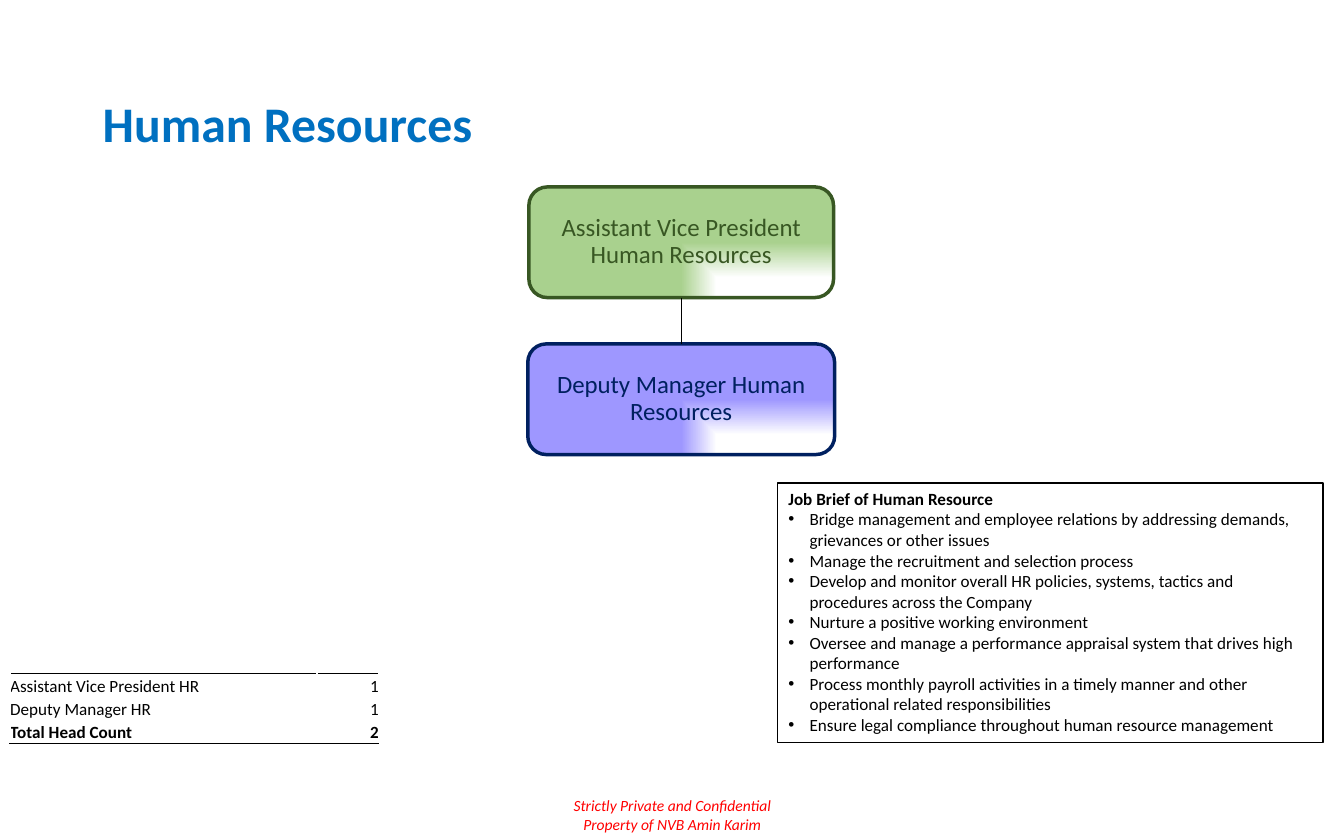
from lxml.etree import SubElement
from pptx import Presentation
from pptx.dml.color import RGBColor
from pptx.enum.shapes import MSO_CONNECTOR as Connector, MSO_SHAPE as Shape
from pptx.enum.text import MSO_ANCHOR as Anchor, PP_ALIGN as Align
from pptx.oxml import parse_xml
from pptx.oxml.ns import nsdecls, qn
from pptx.util import Cm, Pt

COLORS = {
    "title": "0070C0", "footer": "FF0000", "black": "000000", "white": "FFFFFF",
    "green": "A9D18E", "dark green": "385723", "violet": "9E97FF", "navy": "002060",
}
TITLE = "Human Resources"
FOOTER = ["Strictly Private and Confidential", "Property of NVB Amin Karim"]
POSITIONS = [  # text, width, fill, outline and text
    ("Assistant Vice President Human Resources", 6.91, "green", "dark green"),
    ("Deputy Manager Human Resources", 6.96, "violet", "navy"),
]
HEAD_COUNT = [
    ("Assistant Vice President HR", "1"),
    ("Deputy Manager HR", "1"),
    ("Total Head Count", "2"),
]
BRIEF_TITLE = "Job Brief of Human Resource"
BRIEF = [
    "Bridge management and employee relations by addressing demands, grievances or other issues",
    "Manage the recruitment and selection process",
    "Develop and monitor overall HR policies, systems, tactics and procedures across the Company",
    "Nurture a positive working environment",
    "Oversee and manage a performance appraisal system that drives high performance",
    "Process monthly payroll activities in a timely manner and other operational related responsibilities",
    "Ensure legal compliance throughout human resource management",
]
CHART_CENTER, CHART_TOP, CARD_HEIGHT, CARD_PITCH = 15.45, 4.24, 2.51, 3.56
COLUMN_WIDTHS, ROW_HEIGHT = (6.96, 1.4), 0.53


def rgb(name):
    return RGBColor.from_string(COLORS[name])


def write(frame, lines, size=11, color="black", bold=False, italic=False,
          align=Align.LEFT, anchor=Anchor.TOP, spacing=1.0, margin=None):
    frame.word_wrap = True
    frame.vertical_anchor = anchor
    if margin is not None:
        frame.margin_left = frame.margin_right = Cm(margin)
        frame.margin_top = frame.margin_bottom = Cm(margin)
    for index, line in enumerate(lines):
        paragraph = frame.paragraphs[0] if index == 0 else frame.add_paragraph()
        paragraph.alignment, paragraph.line_spacing = align, spacing
        run = paragraph.add_run()
        run.text = line
        font = run.font
        font.name, font.size, font.bold, font.italic = "Calibri", Pt(size), bold, italic
        font.color.rgb = rgb(color)


def add_box(slide, kind, left, top, width, height, line, line_width):
    shape = slide.shapes.add_shape(kind, Cm(left), Cm(top), Cm(width), Cm(height))
    shape.shadow.inherit = False
    shape.fill.solid()
    shape.fill.fore_color.rgb = rgb("white")
    shape.line.color.rgb = rgb(line)
    shape.line.width = Pt(line_width)
    return shape


def fade_to_corner(shape, color):
    """Fill with a colour that turns white towards the bottom right corner."""
    stops = "".join(
        f'<a:gs pos="{position}000"><a:srgbClr val="{COLORS[name]}"/></a:gs>'
        for position, name in ((0, "white"), (36, "white"), (100, color)))
    gradient = parse_xml(
        f'<a:gradFill {nsdecls("a")} rotWithShape="1"><a:gsLst>{stops}</a:gsLst>'
        '<a:path path="rect"><a:fillToRect l="100000" t="100000"/></a:path></a:gradFill>')
    solid = shape.element.spPr.find(qn("a:solidFill"))
    solid.getparent().replace(solid, gradient)


def add_bullet(paragraph):
    properties = paragraph._p.get_or_add_pPr()
    properties.set("marL", str(Cm(0.48)))
    properties.set("indent", str(-Cm(0.48)))
    SubElement(properties, qn("a:buFont"), typeface="Arial")
    SubElement(properties, qn("a:buChar"), char="•")


def add_border(cell, side):
    cell._tc.get_or_add_tcPr().insert(0, parse_xml(
        f'<a:{side} {nsdecls("a")} w="{Pt(1)}"><a:solidFill>'
        f'<a:srgbClr val="{COLORS["black"]}"/></a:solidFill></a:{side}>'))


def add_org_chart(slide):
    cards = []
    for index, (text, width, fill, accent) in enumerate(POSITIONS):
        card = add_box(slide, Shape.ROUNDED_RECTANGLE, CHART_CENTER - width / 2,
                       CHART_TOP + index * CARD_PITCH, width, CARD_HEIGHT, accent, 2.25)
        fade_to_corner(card, fill)
        write(card.text_frame, [text], size=16, color=accent, align=Align.CENTER,
              anchor=Anchor.MIDDLE, spacing=0.9, margin=0.03)
        cards.append(card)
    for upper, lower in zip(cards, cards[1:]):
        link = slide.shapes.add_connector(Connector.STRAIGHT, 0, 0, 0, 0)
        link.begin_connect(upper, 2)
        link.end_connect(lower, 0)
        link.line.color.rgb = rgb("black")
        link.line.width = Pt(0.75)
        SubElement(link.element.spPr, qn("a:effectLst"))


def add_head_count(slide):
    last = len(HEAD_COUNT) - 1
    table = slide.shapes.add_table(
        len(HEAD_COUNT), len(COLUMN_WIDTHS), Cm(0.23), Cm(15.27),
        Cm(sum(COLUMN_WIDTHS)), Cm(ROW_HEIGHT * len(HEAD_COUNT))).table
    table.first_row = table.horz_banding = False
    for column, width in zip(table.columns, COLUMN_WIDTHS):
        column.width = Cm(width)
    for row, values in enumerate(HEAD_COUNT):
        table.rows[row].height = Cm(ROW_HEIGHT)
        for column, value in enumerate(values):
            cell = table.cell(row, column)
            cell.fill.background()
            cell.margin_left = cell.margin_right = cell.margin_top = cell.margin_bottom = 0
            cell.vertical_anchor = Anchor.BOTTOM
            write(cell.text_frame, [value], bold=row == last,
                  align=Align.RIGHT if column else Align.LEFT)
            cell.vertical_anchor = Anchor.BOTTOM
            if row == 0:
                add_border(cell, "lnT")
            if row == last:
                add_border(cell, "lnB")


def add_job_brief(slide):
    box = add_box(slide, Shape.RECTANGLE, 17.63, 10.95, 12.37, 5.89, "black", 1)
    write(box.text_frame, [BRIEF_TITLE, *BRIEF])
    heading, *duties = box.text_frame.paragraphs
    heading.runs[0].font.bold = True
    for paragraph in duties:
        add_bullet(paragraph)


def add_text(slide, lines, left, top, width, height, **style):
    box = slide.shapes.add_textbox(Cm(left), Cm(top), Cm(width), Cm(height))
    write(box.text_frame, lines, **style)


def main():
    presentation = Presentation()
    presentation.slide_width, presentation.slide_height = Cm(30.48), Cm(19.05)
    slide = presentation.slides.add_slide(presentation.slide_layouts[6])
    add_text(slide, FOOTER, 12.73, 17.93, 5.03, 1.12, size=10, color="footer",
             italic=True, align=Align.CENTER)
    add_text(slide, [TITLE], 2.08, 1.02, 26.29, 3.68, size=32, color="title",
             bold=True, anchor=Anchor.MIDDLE, spacing=0.9)
    add_org_chart(slide)
    add_head_count(slide)
    add_job_brief(slide)
    presentation.save("out.pptx")


if __name__ == "__main__":
    main()
